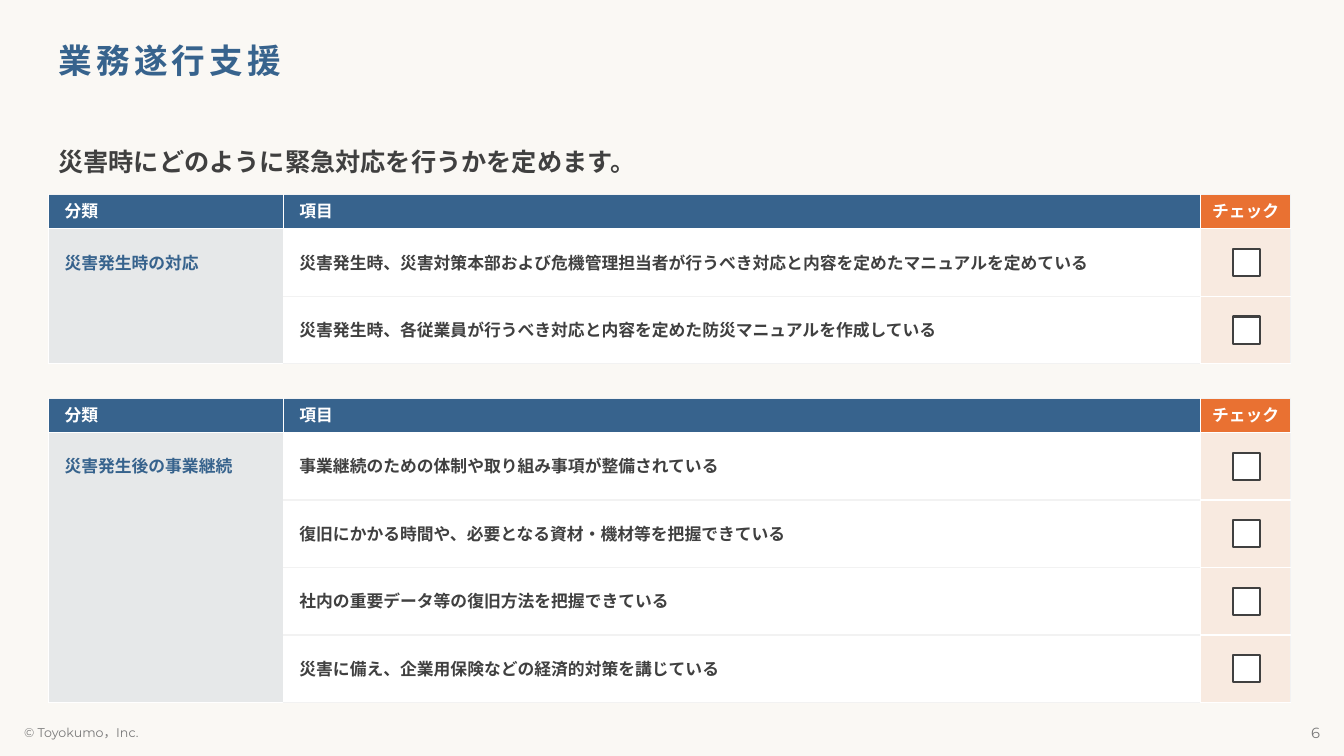
"""Builds the disaster-response checklist slide."""
from dataclasses import dataclass

from lxml import etree
from pptx import Presentation
from pptx.dml.color import RGBColor
from pptx.enum.lang import MSO_LANGUAGE_ID
from pptx.enum.shapes import MSO_SHAPE
from pptx.enum.text import MSO_ANCHOR, MSO_AUTO_SIZE, PP_ALIGN
from pptx.oxml.ns import qn
from pptx.util import Inches, Pt

LEFT, CENTER, RIGHT = PP_ALIGN.LEFT, PP_ALIGN.CENTER, PP_ALIGN.RIGHT
TOP, MIDDLE = MSO_ANCHOR.TOP, MSO_ANCHOR.MIDDLE
RECTANGLE = MSO_SHAPE.RECTANGLE
NO_AUTOFIT = MSO_AUTO_SIZE.NONE
JAPANESE = MSO_LANGUAGE_ID.JAPANESE


@dataclass(frozen=True)
class Theme:
    font: str = "Montserrat"
    background: str = "FAF8F4"
    navy: str = "37638D"
    orange: str = "E97132"
    ink: str = "404040"
    muted: str = "797979"
    white: str = "FFFFFF"
    rule: str = "F2F2F2"
    title_size: float = 24
    lead_size: float = 18
    table_size: float = 12
    page_size: float = 10.5
    footer_size: float = 9


TABLE_LEFT = 0.48
COLUMN_WIDTHS = (2.33, 9.1, 0.89)
HEADER_HEIGHT, ROW_HEIGHT = 0.34, 0.67
CHECKBOX_LEFT, CHECKBOX_OFFSET, CHECKBOX_SIZE = 12.23, 0.2, 0.27
HEADER_INSETS = (0.16, 0.05, 0.1, 0.05)
CATEGORY_INSETS = (0.16, 0.24, 0.01, 0)
ITEM_INSETS = (0.16, 0.01, 0.01, 0)

CHECKLISTS = (
    (1.93, "災害発生時の対応", (
        "災害発生時、災害対策本部および危機管理担当者が行うべき対応と内容を定めたマニュアルを定めている",
        "災害発生時、各従業員が行うべき対応と内容を定めた防災マニュアルを作成している",
    )),
    (3.95, "災害発生後の事業継続", (
        "事業継続のための体制や取り組み事項が整備されている",
        "復旧にかかる時間や、必要となる資材・機材等を把握できている",
        "社内の重要データ等の復旧方法を把握できている",
        "災害に備え、企業用保険などの経済的対策を講じている",
    )),
)


def write(frame, text, *, font, size, color, bold=False, align=LEFT,
          tracking=None, line_spacing=None):
    """Write one formatted paragraph into a text frame."""
    paragraph = frame.paragraphs[0]
    paragraph.alignment = align
    if line_spacing:
        paragraph.line_spacing = line_spacing
    run = paragraph.add_run()
    run.text = text
    run.font.name = font
    run.font.size = Pt(size)
    run.font.bold = bold
    run.font.color.rgb = RGBColor.from_string(color)
    run.font.language_id = JAPANESE
    properties = run.font._element
    etree.SubElement(properties, qn("a:ea")).set("typeface", font)
    if tracking:
        properties.set("spc", str(tracking * 100))


class SlideBuilder:
    """Draws themed elements on the current slide."""

    def __init__(self, slide, theme):
        self.slide = slide
        self.theme = theme
        background = slide.background.fill
        background.solid()
        background.fore_color.rgb = RGBColor.from_string(theme.background)

    def title(self, text, left, top, width, height):
        heading = self.slide.shapes.title
        heading.left, heading.top = Inches(left), Inches(top)
        heading.width, heading.height = Inches(width), Inches(height)
        frame = heading.text_frame
        frame.auto_size = NO_AUTOFIT
        frame.vertical_anchor = MIDDLE
        frame.margin_top = Inches(0.08)
        write(frame, text, font=self.theme.font, size=self.theme.title_size,
              color=self.theme.navy, bold=True, tracking=3, line_spacing=0.9)

    def label(self, text, left, top, width, height, **style):
        box = self.slide.shapes.add_textbox(
            Inches(left), Inches(top), Inches(width), Inches(height))
        frame = box.text_frame
        frame.word_wrap = True
        frame.vertical_anchor = MIDDLE
        write(frame, text, font=self.theme.font, **style)

    def cell(self, cell, fill, text="", color=None, alpha=None, align=LEFT,
             anchor=MIDDLE, insets=None, **borders):
        cell.fill.solid()
        cell.fill.fore_color.rgb = RGBColor.from_string(fill)
        properties = cell._tc.get_or_add_tcPr()
        if alpha:
            shade = properties.find(".//" + qn("a:srgbClr"))
            etree.SubElement(shade, qn("a:alpha")).set("val", str(alpha * 1000))
        for index, side in enumerate("LRTB"):
            line = etree.Element(qn("a:ln" + side), w=str(Pt(1)))
            solid = etree.SubElement(line, qn("a:solidFill"))
            stroke = borders.get(side, self.theme.white)
            etree.SubElement(solid, qn("a:srgbClr")).set("val", stroke)
            properties.insert(index, line)
        cell.vertical_anchor = anchor
        if insets:
            (cell.margin_left, cell.margin_top,
             cell.margin_right, cell.margin_bottom) = map(Inches, insets)
        if text:
            write(cell.text_frame, text, font=self.theme.font, color=color,
                  size=self.theme.table_size, bold=True, align=align)

    def checklist(self, top, category, items):
        theme = self.theme
        table = self.slide.shapes.add_table(
            len(items) + 1, len(COLUMN_WIDTHS), Inches(TABLE_LEFT), Inches(top),
            Inches(sum(COLUMN_WIDTHS)),
            Inches(HEADER_HEIGHT + ROW_HEIGHT * len(items))).table
        table.horz_banding = False
        for column, width in zip(table.columns, COLUMN_WIDTHS):
            column.width = Inches(width)
        for index, row in enumerate(table.rows):
            row.height = Inches(ROW_HEIGHT if index else HEADER_HEIGHT)

        for column, heading in enumerate(("分類", "項目")):
            self.cell(table.cell(0, column), theme.navy, heading, theme.white,
                      insets=HEADER_INSETS, T=theme.rule)
        self.cell(table.cell(0, 2), theme.orange, "チェック", theme.white,
                  align=CENTER, T=theme.rule, R=theme.rule, B=theme.rule)

        table.cell(1, 0).merge(table.cell(len(items), 0))
        for row, item in enumerate(items, 1):
            self.cell(table.cell(row, 0), theme.navy,
                      category if row == 1 else "", theme.navy, alpha=10,
                      anchor=TOP, insets=CATEGORY_INSETS)
            edge = theme.white if row == 1 else theme.rule
            self.cell(table.cell(row, 1), theme.white, item, theme.ink,
                      insets=ITEM_INSETS, T=edge, B=theme.rule)
            self.cell(table.cell(row, 2), theme.orange, alpha=10, R=theme.rule)

    def checkboxes(self, top, count):
        for row in range(count):
            row_top = top + HEADER_HEIGHT + row * ROW_HEIGHT
            box = self.slide.shapes.add_shape(
                RECTANGLE, Inches(CHECKBOX_LEFT), Inches(row_top + CHECKBOX_OFFSET),
                Inches(CHECKBOX_SIZE), Inches(CHECKBOX_SIZE))
            box.shadow.inherit = False
            box.fill.solid()
            box.fill.fore_color.rgb = RGBColor.from_string(self.theme.white)
            box.line.color.rgb = RGBColor.from_string(self.theme.ink)
            box.line.width = Pt(1.5)


def main():
    theme = Theme()
    presentation = Presentation()
    presentation.slide_width = Inches(13.33)
    presentation.slide_height = Inches(7.5)
    slide = presentation.slides.add_slide(presentation.slide_layouts[5])
    builder = SlideBuilder(slide, theme)

    builder.title("業務遂行支援", 0.48, 0.28, 12.33, 0.66)
    builder.label("© Toyokumo，Inc.", 0.14, 7.13, 3.92, 0.27,
                  size=theme.footer_size, color=theme.muted)
    builder.label("6", 10.19, 7.13, 3, 0.27, size=theme.page_size,
                  color=theme.muted, align=RIGHT)
    builder.label("災害時にどのように緊急対応を行うかを定めます。",
                  0.48, 1.27, 12.36, 0.66,
                  size=theme.lead_size, color=theme.ink, bold=True)
    for top, category, items in CHECKLISTS:
        builder.checklist(top, category, items)
        builder.checkboxes(top, len(items))

    presentation.save("out.pptx")


if __name__ == "__main__":
    main()
